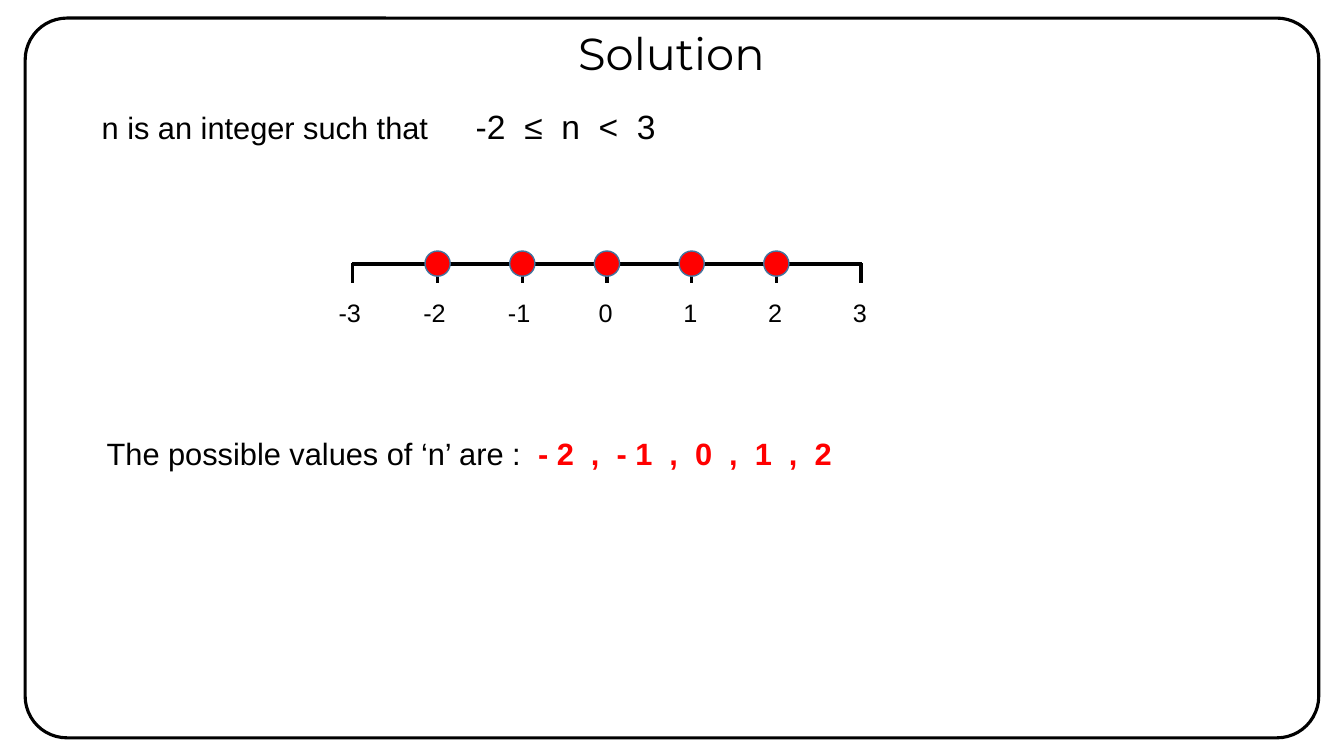
from dataclasses import dataclass

from lxml import etree
from pptx import Presentation
from pptx import util as u
from pptx.dml.color import RGBColor
from pptx.enum import shapes, text
from pptx.oxml import ns


@dataclass(frozen=True)
class Theme:
    ink: str = "000000"
    paper: str = "FFFFFF"
    accent: str = "FF0000"
    rim: str = "43739E"
    head: str = "Montserrat"
    body: str = "Arial"
    title: int = 32
    math: int = 24
    text: int = 22
    label: int = 18


class Board:
    """Holds the theme, the slide and the place new shapes go to."""

    def __init__(self, deck, theme):
        self.theme = theme
        self.slide = deck.slides.add_slide(deck.slide_layouts[5])
        self.target = self.slide.shapes

    def group(self):
        self.target = self.slide.shapes.add_group_shape().shapes

    def style(self, run, size, font, color, bold=False):
        run.font.size = u.Pt(size)
        run.font.name = font
        run.font.bold = bold
        run.font.color.rgb = RGBColor.from_string(color)

    def title(self, words, x, y, w, h):
        box = self.slide.shapes.title
        box.left, box.top, box.width, box.height = map(u.Inches, (x, y, w, h))
        frame = box.text_frame
        frame.text = words
        frame.vertical_anchor = text.MSO_ANCHOR.TOP
        frame.auto_size = text.MSO_AUTO_SIZE.NONE
        para = frame.paragraphs[0]
        para.alignment = text.PP_ALIGN.CENTER
        self.style(para.runs[0], self.theme.title, self.theme.head, self.theme.ink)
        return box

    def label(self, words, x, y, w, h, size, strong=""):
        box = self.target.add_textbox(*map(u.Inches, (x, y, w, h)))
        frame = box.text_frame
        frame.word_wrap = True
        frame.text = words
        para = frame.paragraphs[0]
        self.style(para.runs[0], size, self.theme.body, self.theme.ink)
        if strong:
            run = para.add_run()
            run.text = strong
            self.style(run, size, self.theme.body, self.theme.accent, True)

    def shape(self, kind, x, y, w, h, fill, line, width):
        item = self.target.add_shape(kind, *map(u.Inches, (x, y, w, h)))
        item.shadow.inherit = False
        item.fill.solid()
        item.fill.fore_color.rgb = RGBColor.from_string(fill)
        item.line.color.rgb = RGBColor.from_string(line)
        item.line.width = u.Pt(width)
        return item

    def line(self, x1, y1, x2, y2, width):
        item = self.target.add_connector(
            shapes.MSO_CONNECTOR.STRAIGHT, *map(u.Inches, (x1, y1, x2, y2)))
        item.line.color.rgb = RGBColor.from_string(self.theme.ink)
        item.line.width = u.Pt(width)
        etree.SubElement(item.element.spPr, ns.qn("a:effectLst"))


def main():
    deck = Presentation()
    deck.slide_width, deck.slide_height = u.Inches(13.33), u.Inches(7.5)
    theme = Theme()
    board = Board(deck, theme)
    kind = shapes.MSO_SHAPE

    # Rounded frame, placed behind the title
    title = board.title("Solution", 5.09, 0.2, 3.14, 0.64)
    frame = board.shape(kind.ROUNDED_RECTANGLE, 0.25, 0.18, 12.83, 7.14,
                        theme.paper, theme.ink, 2.25)
    frame.adjustments[0] = 0.058
    title.element.addprevious(frame.element)

    # Question and answer
    board.label("n is an integer such that", 0.91, 1.03, 4.71, 0.47, theme.text)
    board.label("-2  ≤  n  <  3", 4.62, 1, 2.32, 0.5, theme.math)
    board.label("The possible values of ‘n’ are :  ", 0.96, 4.26, 8.59, 0.47,
                theme.text, "- 2  ,  - 1  ,  0  ,  1  ,  2")

    # Number line with ticks and labels
    zero, step, dot = 6.02, 0.84, 0.25
    board.group()
    for n in range(-3, 4):
        x = zero + n * step
        board.line(x, 2.61, x, 2.81, 2.25)
        shift = 0.24 if n < 0 else 0.18
        board.label(str(n), x - shift, 2.9, 0.6, 0.4, theme.label)
    board.line(3.49, 2.62, 8.55, 2.62, 3)

    # Dots on the values with -2 ≤ n < 3
    for n in range(-2, 3):
        board.shape(kind.OVAL, zero + n * step - dot / 2, 2.49, dot, dot,
                    theme.accent, theme.rim, 1)

    deck.save("out.pptx")


if __name__ == "__main__":
    main()
